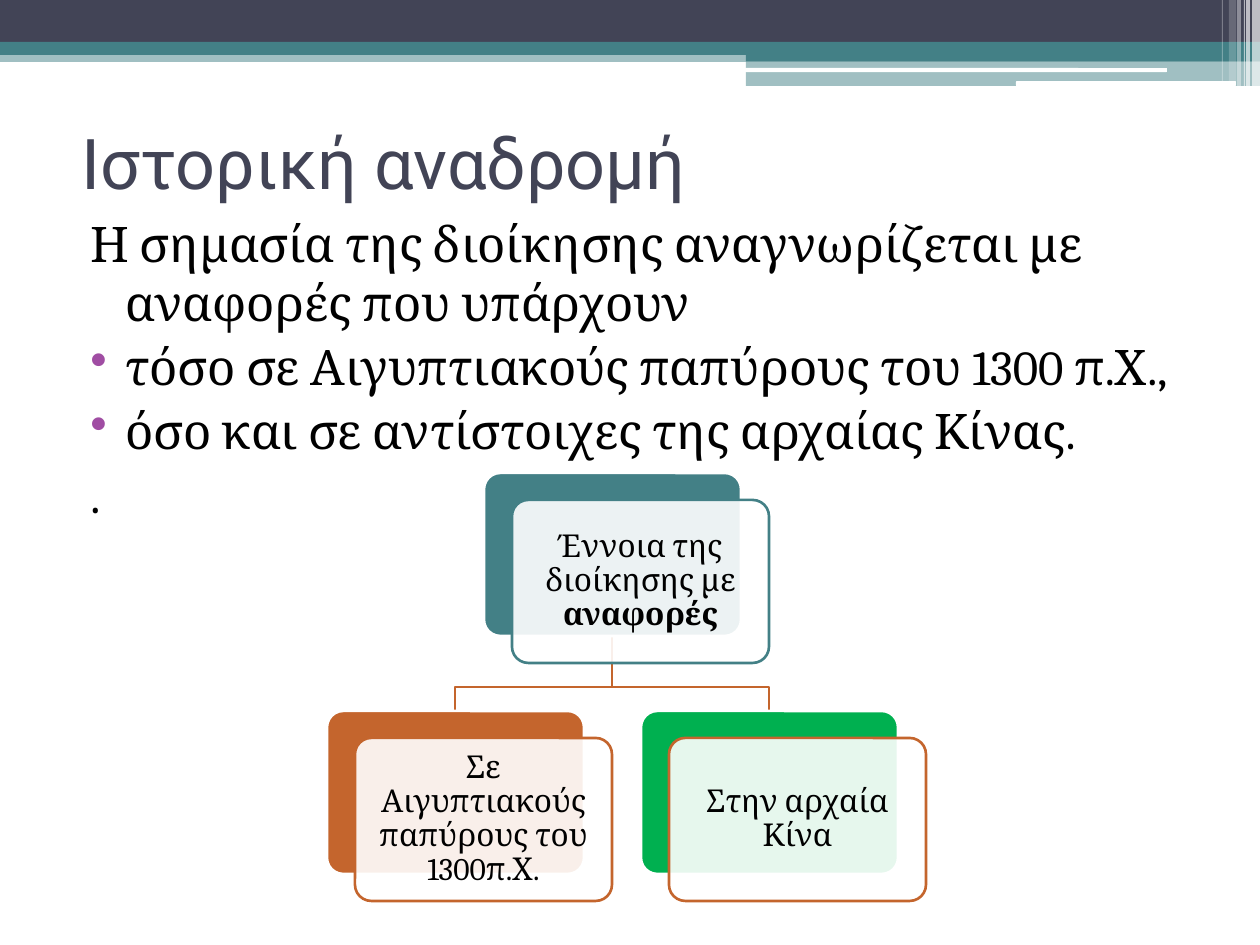
import pptx
import pptx.util
import pptx.dml.color
import pptx.enum.shapes
import pptx.enum.text
import pptx.oxml
import pptx.oxml.ns

SCALE = 914400 / 126
RECTANGLE = pptx.enum.shapes.MSO_SHAPE.RECTANGLE
ROUNDED = pptx.enum.shapes.MSO_SHAPE.ROUNDED_RECTANGLE
MIDDLE = pptx.enum.text.MSO_ANCHOR.MIDDLE
NAMESPACE = pptx.oxml.ns.nsdecls("a")


def color(value):
    return pptx.dml.color.RGBColor.from_string(value)


def add_block(kind, box, fill, opacity=100, line=None, corner=0.1):
    shape = slide.shapes.add_shape(kind, *[round(length * SCALE) for length in box])
    shape.shadow.inherit = False
    shape.fill.solid()
    shape.fill.fore_color.rgb = color(fill)
    if opacity < 100:
        alpha = pptx.oxml.parse_xml(f'<a:alpha {NAMESPACE} val="{opacity * 1000}"/>')
        shape.fill._xPr.find(".//" + pptx.oxml.ns.qn("a:srgbClr")).append(alpha)
    if line:
        shape.line.color.rgb = color(line)
        shape.line.width = pptx.util.Pt(1.5)
    else:
        shape.line.fill.background()
    if kind == ROUNDED:
        shape.adjustments[0] = corner
    return shape


presentation = pptx.Presentation()
presentation.slide_width = round(1260 * SCALE)
presentation.slide_height = round(945 * SCALE)
slide = presentation.slides.add_slide(presentation.slide_layouts[6])

for box, fill, opacity in [
    ((0, 50, 1260, 12), "438086", 50),
    ((0, 0, 1260, 42), "424456", 100),
    ((0, 42, 1260, 13), "438086", 100),
    ((746, 49, 514, 12), "438086", 100),
    ((746, 61, 514, 25), "438086", 50),
]:
    add_block(RECTANGLE, box, fill, opacity)

for box in [(745, 68, 422, 4), (1016, 81, 220, 5)]:
    add_block(ROUNDED, box, "FFFFFF", corner=0.17)

for left, width, height, opacity in [
    (1252, 8, 86, 65),
    (1246, 4, 86, 65),
    (1244, 1, 86, 60),
    (1237, 4, 86, 40),
    (1229, 7, 81, 20),
    (1222, 1, 81, 30),
]:
    add_block(RECTANGLE, (left, 0, width, height), "FFFFFF", opacity)

title = slide.shapes.add_textbox(*[round(length * SCALE) for length in (69, 88, 1134, 147)])
title.text_frame.word_wrap = True
title.text_frame.vertical_anchor = MIDDLE
paragraph = title.text_frame.paragraphs[0]
paragraph.text = "Ιστορική αναδρομή"
paragraph.font.name = "Roboto"
paragraph.font.size = pptx.util.Pt(40)
paragraph.font.color.rgb = color("424456")

body = slide.shapes.add_textbox(*[round(length * SCALE) for length in (63, 207, 1134, 295)])
body.text_frame.word_wrap = True
for index, (text, bulleted) in enumerate([
    ("Η σημασία της διοίκησης αναγνωρίζεται με αναφορές που υπάρχουν", False),
    ("τόσο σε Αιγυπτιακούς παπύρους του 1300 π.Χ.,", True),
    ("όσο και σε αντίστοιχες της αρχαίας Κίνας.", True),
    (".", False),
]):
    paragraph = body.text_frame.add_paragraph() if index else body.text_frame.paragraphs[0]
    paragraph.text = text
    paragraph.space_before = pptx.util.Pt(3)
    paragraph.font.name = "Cambria"
    paragraph.font.size = pptx.util.Pt(28)
    paragraph.font.color.rgb = color("000000")
    properties = paragraph._p.get_or_add_pPr()
    properties.set("marL", str(round(50 * SCALE)))
    properties.set("indent", str(round(-35 * SCALE)))
    if bulleted:
        bullet_color = f'<a:buClr {NAMESPACE}><a:srgbClr val="A04DA3"/></a:buClr>'
        bullet = f'<a:buChar {NAMESPACE} char="•"/>'
    else:
        bullet_color = None
        bullet = f"<a:buNone {NAMESPACE}/>"
    position = list(properties).index(properties.find(pptx.oxml.ns.qn("a:spcBef"))) + 1
    for xml in filter(None, (bullet, bullet_color)):
        properties.insert(position, pptx.oxml.parse_xml(xml))

NODE_WIDTH, NODE_HEIGHT = 257, 163
ROOT_LEFT, ROOT_TOP, CHILD_TOP = 484, 473, 711
CHILD_SHIFT = 157
root_center = ROOT_LEFT + NODE_WIDTH // 2

for shift in (CHILD_SHIFT, -CHILD_SHIFT):
    builder = slide.shapes.build_freeform(root_center, ROOT_TOP + NODE_HEIGHT, scale=SCALE)
    builder.add_line_segments([
        (root_center, 687),
        (root_center + shift, 687),
        (root_center + shift, CHILD_TOP),
    ], close=False)
    branch = builder.convert_to_shape()
    branch.shadow.inherit = False
    branch.fill.background()
    branch.line.color.rgb = color("C4652D")
    branch.line.width = pptx.util.Pt(1.5)

for left, top, fill, outline, runs in [
    (ROOT_LEFT, ROOT_TOP, "438086", "438086",
     [("Έννοια της διοίκησης με ", False), ("αναφορές", True)]),
    (ROOT_LEFT - CHILD_SHIFT, CHILD_TOP, "C4652D", "C4652D",
     [("Σε Αιγυπτιακούς παπύρους του 1300π.Χ.", False)]),
    (ROOT_LEFT + CHILD_SHIFT, CHILD_TOP, "00B050", "C4652D",
     [("Στην αρχαία Κίνα", False)]),
]:
    add_block(ROUNDED, (left, top, NODE_WIDTH, NODE_HEIGHT), fill, line="FFFFFF")
    card = add_block(ROUNDED, (left + 28, top + 27, NODE_WIDTH, NODE_HEIGHT),
                     "FFFFFF", 90, outline)
    frame = card.text_frame
    frame.word_wrap = True
    frame.vertical_anchor = MIDDLE
    frame.margin_left = frame.margin_right = round(9 * SCALE)
    frame.margin_top = frame.margin_bottom = round(9 * SCALE)
    paragraph = frame.paragraphs[0]
    paragraph.alignment = pptx.enum.text.PP_ALIGN.CENTER
    paragraph.line_spacing = 0.9
    paragraph.font.name = "Cambria"
    paragraph.font.size = pptx.util.Pt(18)
    paragraph.font.color.rgb = color("000000")
    for text, bold in runs:
        run = paragraph.add_run()
        run.text = text
        if bold:
            run.font.bold = True

presentation.save("out.pptx")
